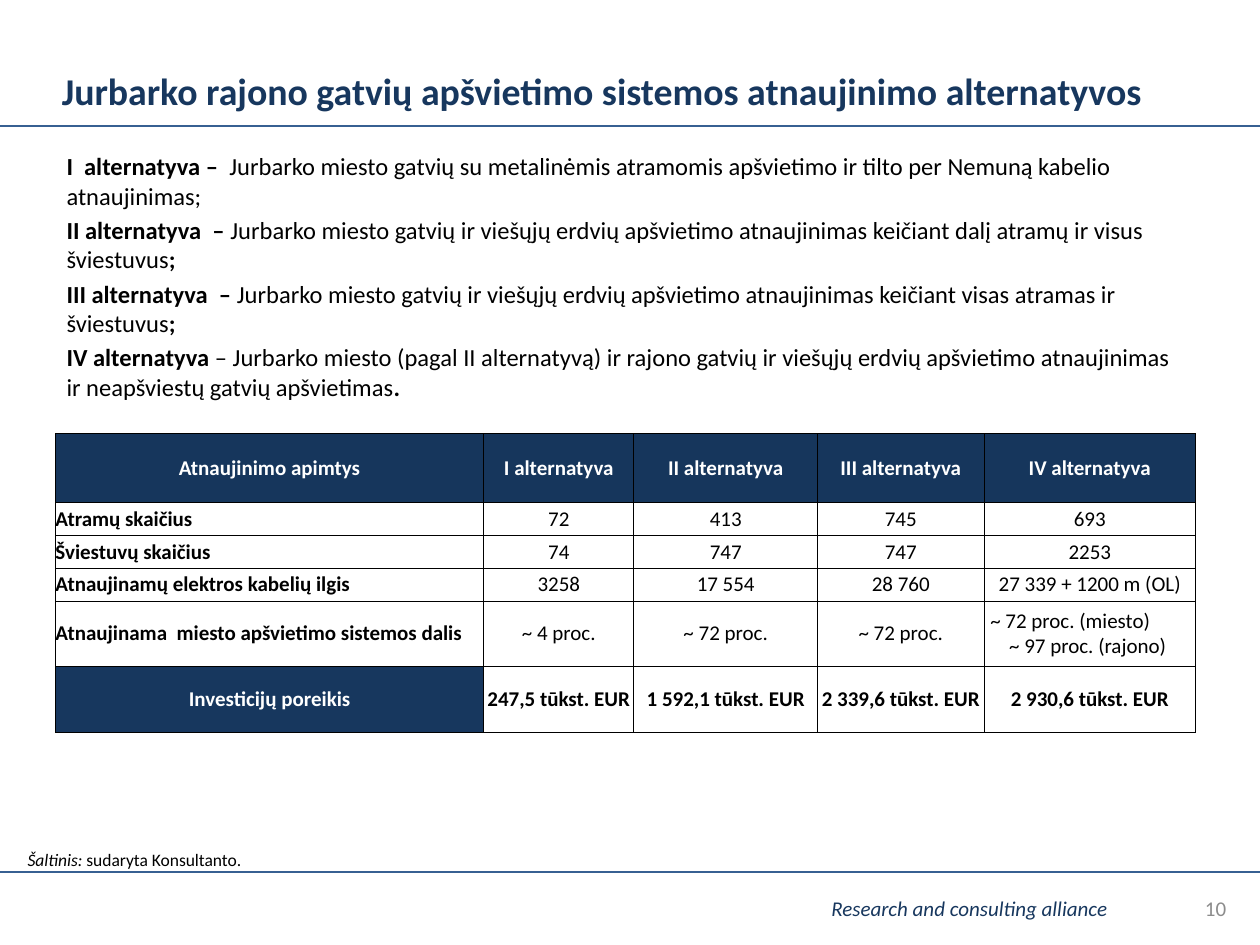
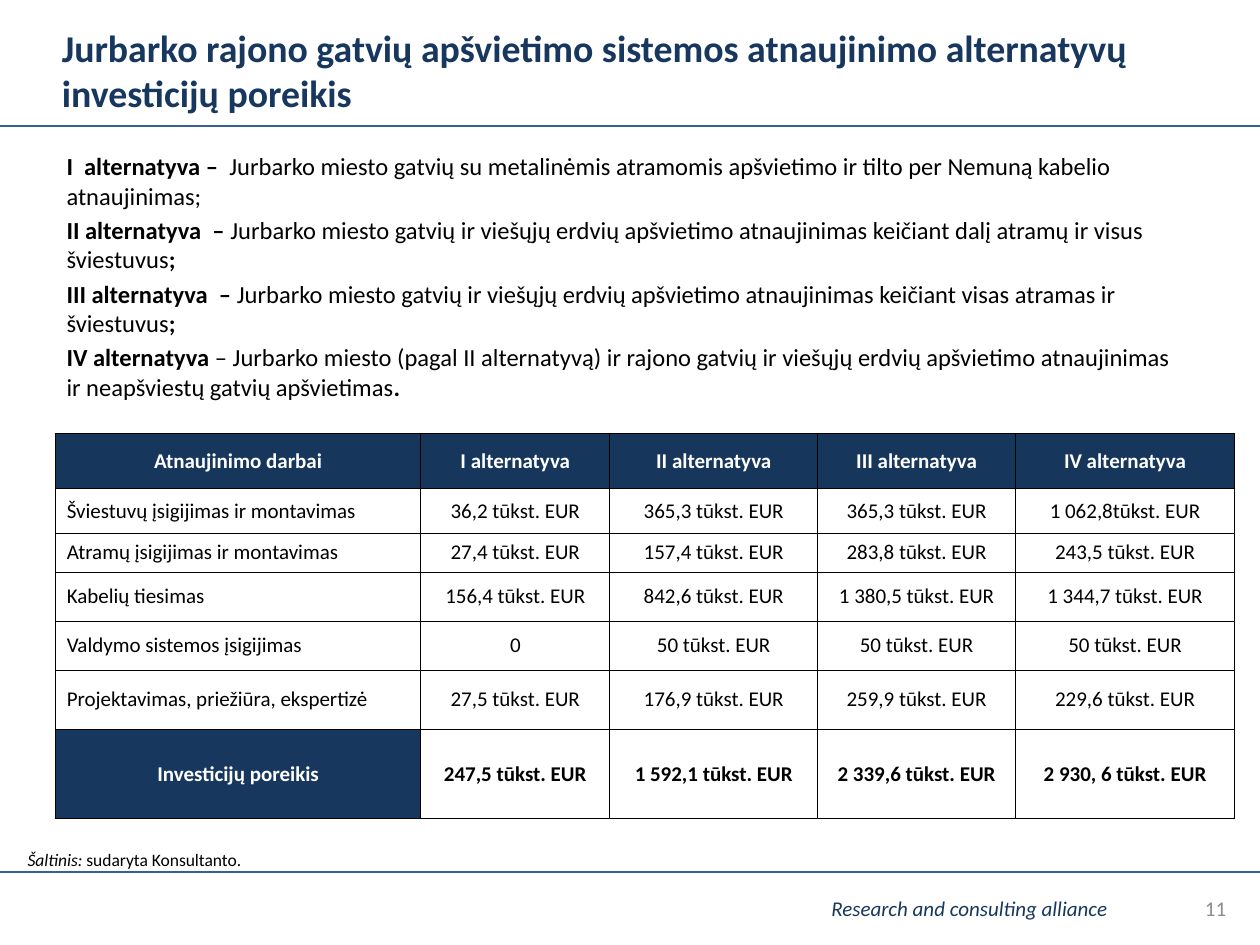
from dataclasses import dataclass
from typing import NamedTuple

from lxml.etree import SubElement
from pptx import Presentation
from pptx.dml.color import RGBColor
from pptx.enum.shapes import MSO_CONNECTOR
from pptx.enum.text import MSO_ANCHOR as Anchor, MSO_AUTO_SIZE as AutoSize, PP_ALIGN as Align
from pptx.oxml.ns import qn
from pptx.util import Inches, Pt

COLORS = {
    "navy": "17375E",
    "header": "16365C",
    "rule": "376092",
    "number": "8C8C8C",
    "black": "000000",
    "white": "FFFFFF",
}
FONT = "Calibri"
TITLE_ONLY = 5
RULE_TOPS = (1, 6.92)


class Box(NamedTuple):
    left: float
    top: float
    width: float
    height: float

    def lengths(self) -> list:
        return [Inches(value) for value in self]


class Run(NamedTuple):
    text: str
    bold: bool = False
    italic: bool = False


@dataclass
class CostTable:
    width: float
    columns: list[float]
    rows: list[float]
    cells: list[list[str]]
    label_bold: bool
    label_inset: float


@dataclass
class AlternativesSlide:
    title: str
    title_top: float
    number: str
    table: CostTable


BODY_BOX = Box(0.43, 1.15, 9, 4.95)
SOURCE_BOX = Box(0.12, 6.74, 7.01, 0.16)
FOOTER_BOX = Box(6.5, 7.06, 3.46, 0.29)
NUMBER_BOX = Box(7.5, 7.01, 2.33, 0.4)
TABLE_LEFT, TABLE_TOP = 0.44, 3.44

ALTERNATIVES = [
    [Run("I  alternatyva –  ", bold=True),
     Run("Jurbarko miesto gatvių su metalinėmis atramomis apšvietimo ir tilto per "
         "Nemuną kabelio atnaujinimas;")],
    [Run("II alternatyva  – ", bold=True),
     Run("Jurbarko miesto gatvių ir viešųjų erdvių apšvietimo atnaujinimas keičiant "
         "dalį atramų ir visus šviestuvus"),
     Run(";", bold=True)],
    [Run("III alternatyva  – ", bold=True),
     Run("Jurbarko miesto gatvių ir viešųjų erdvių apšvietimo atnaujinimas keičiant "
         "visas atramas ir šviestuvus"),
     Run(";", bold=True)],
    [Run("IV alternatyva ", bold=True),
     Run("– Jurbarko miesto (pagal II alternatyvą) ir rajono gatvių ir viešųjų erdvių "
         "apšvietimo atnaujinimas ir neapšviestų gatvių apšvietimas"),
     Run(".", bold=True)],
]
SOURCE = [[Run("Šaltinis: ", italic=True), Run("sudaryta Konsultanto.")]]
ALTERNATIVE_NAMES = ["I alternatyva", "II alternatyva", "III alternatyva", "IV alternatyva"]

SLIDES = [
    AlternativesSlide(
        "Jurbarko rajono gatvių apšvietimo sistemos atnaujinimo alternatyvos",
        0.45,
        "10",
        CostTable(
            width=9.05,
            columns=[3.4, 1.19, 1.46, 1.32, 1.68],
            rows=[0.55, 0.26, 0.26, 0.26, 0.52, 0.52],
            cells=[
                ["Atnaujinimo apimtys", *ALTERNATIVE_NAMES],
                ["Atramų skaičius", "72", "413", "745", "693"],
                ["Šviestuvų skaičius", "74", "747", "747", "2253"],
                ["Atnaujinamų elektros kabelių ilgis", "3258", "17 554", "28 760",
                 "27 339 + 1200 m (OL)"],
                ["Atnaujinama  miesto apšvietimo sistemos dalis", "~ 4 proc.", "~ 72 proc.",
                 "~ 72 proc.", "~ 72 proc. (miesto)\n~ 97 proc. (rajono)"],
                ["Investicijų poreikis", "247,5 tūkst. EUR", "1 592,1 tūkst. EUR",
                 "2 339,6 tūkst. EUR", "2 930,6 tūkst. EUR"],
            ],
            label_bold=True,
            label_inset=0,
        ),
    ),
    AlternativesSlide(
        "Jurbarko rajono gatvių apšvietimo sistemos atnaujinimo alternatyvų "
        "investicijų poreikis",
        0.29,
        "11",
        CostTable(
            width=9.36,
            columns=[2.9, 1.5, 1.65, 1.57, 1.74],
            rows=[0.44, 0.35, 0.31, 0.39, 0.39, 0.47, 0.71],
            cells=[
                ["Atnaujinimo darbai", *ALTERNATIVE_NAMES],
                ["Šviestuvų įsigijimas ir montavimas", "36,2 tūkst. EUR", "365,3 tūkst. EUR",
                 "365,3 tūkst. EUR", "1 062,8tūkst. EUR"],
                ["Atramų įsigijimas ir montavimas", "27,4 tūkst. EUR", "157,4 tūkst. EUR",
                 "283,8 tūkst. EUR", "243,5 tūkst. EUR"],
                ["Kabelių tiesimas", "156,4 tūkst. EUR", "842,6 tūkst. EUR",
                 "1 380,5 tūkst. EUR", "1 344,7 tūkst. EUR"],
                ["Valdymo sistemos įsigijimas", "0", *["50 tūkst. EUR"] * 3],
                ["Projektavimas, priežiūra, ekspertizė", "27,5 tūkst. EUR",
                 "176,9 tūkst. EUR", "259,9 tūkst. EUR", "229,6 tūkst. EUR"],
                ["Investicijų poreikis", "247,5 tūkst. EUR", "1 592,1 tūkst. EUR",
                 "2 339,6 tūkst. EUR", "2 930, 6 tūkst. EUR"],
            ],
            label_bold=False,
            label_inset=0.09,
        ),
    ),
]


def rgb(name: str) -> RGBColor:
    return RGBColor.from_string(COLORS[name])


def write_text(frame, text, *, size: float = 12, color: str = "black", bold: bool = False,
               italic: bool = False, align=Align.LEFT, gap: float = 0,
               indents: tuple = ()) -> None:
    if isinstance(text, str):
        text = [[Run(line, bold, italic)] for line in text.split("\n")]
    for index, runs in enumerate(text):
        paragraph = frame.paragraphs[0] if index == 0 else frame.add_paragraph()
        paragraph.alignment = align
        paragraph.space_before = Pt(gap if index else 0)
        if indents:
            paragraph._p.get_or_add_pPr().set("marL", str(Inches(indents[index])))
        for part in runs:
            run = paragraph.add_run()
            run.text = part.text
            run.font.name = FONT
            run.font.size = Pt(size)
            run.font.bold = part.bold
            run.font.italic = part.italic
            run.font.color.rgb = rgb(color)


def add_text(slide, box: Box, text, *, anchor=Anchor.MIDDLE, **text_format) -> None:
    frame = slide.shapes.add_textbox(*box.lengths()).text_frame
    frame.word_wrap = True
    frame.vertical_anchor = anchor
    if anchor == Anchor.MIDDLE:
        frame.margin_top = frame.margin_bottom = 0
    write_text(frame, text, **text_format)


def add_rule(slide, top: float) -> None:
    rule = slide.shapes.add_connector(
        MSO_CONNECTOR.STRAIGHT, 0, Inches(top), Inches(10), Inches(top))
    rule.line.color.rgb = rgb("rule")
    rule.line.width = Pt(1)
    SubElement(rule._element.spPr, qn("a:effectLst"))


def add_frame(slide, number: str) -> None:
    for top in RULE_TOPS:
        add_rule(slide, top)
    add_text(slide, FOOTER_BOX, "Research and consulting alliance", color="navy", italic=True)
    add_text(slide, NUMBER_BOX, number, color="number", align=Align.RIGHT)


def set_title(slide, text: str, top: float) -> None:
    title = slide.shapes.title
    title.left, title.top, title.width, title.height = Box(0.39, top, 9, 0.53).lengths()
    frame = title.text_frame
    frame.word_wrap = True
    frame.auto_size = AutoSize.NONE
    frame.vertical_anchor = Anchor.MIDDLE
    write_text(frame, text, size=21.6, color="navy", bold=True)


def add_borders(cell) -> None:
    properties = cell._tc.get_or_add_tcPr()
    for index, side in enumerate(("lnL", "lnR", "lnT", "lnB")):
        line = SubElement(properties, qn(f"a:{side}"), w=str(Pt(0.5)))
        properties.insert(index, line)
        fill = SubElement(line, qn("a:solidFill"))
        SubElement(fill, qn("a:srgbClr"), val=COLORS["black"])


def format_cell(cell, fill: str | None) -> None:
    cell.margin_left = cell.margin_right = cell.margin_top = cell.margin_bottom = 0
    cell.vertical_anchor = Anchor.MIDDLE
    if fill:
        cell.fill.solid()
        cell.fill.fore_color.rgb = rgb(fill)
    else:
        cell.fill.background()
    add_borders(cell)


def add_cost_table(slide, data: CostTable) -> None:
    box = Box(TABLE_LEFT, TABLE_TOP, data.width, sum(data.rows))
    table = slide.shapes.add_table(
        len(data.rows), len(data.columns), *box.lengths()).table
    table.first_row = table.horz_banding = False
    for column, width in zip(table.columns, data.columns):
        column.width = Inches(width)
    for row, height in zip(table.rows, data.rows):
        row.height = Inches(height)

    last = len(data.rows) - 1
    for row_index, values in enumerate(data.cells):
        for column_index, value in enumerate(values):
            cell = table.cell(row_index, column_index)
            is_header = row_index == 0
            is_total = row_index == last
            is_label = column_index == 0 and not is_header and not is_total
            is_split = "\n" in value
            fill = "header" if is_header else "navy" if is_total and column_index == 0 else None
            format_cell(cell, fill)
            if is_label:
                cell.margin_left = Inches(data.label_inset)
            write_text(
                cell.text_frame, value,
                color="white" if fill else "black",
                bold=is_header or is_total or (is_label and data.label_bold),
                align=Align.LEFT if is_label or is_split else Align.CENTER,
                indents=(0.05, 0.2) if is_split else ())


def build_slide(presentation, content: AlternativesSlide) -> None:
    slide = presentation.slides.add_slide(presentation.slide_layouts[TITLE_ONLY])
    add_frame(slide, content.number)
    set_title(slide, content.title, content.title_top)
    add_text(slide, BODY_BOX, ALTERNATIVES, anchor=Anchor.TOP, size=14, gap=2.8)
    add_cost_table(slide, content.table)
    add_text(slide, SOURCE_BOX, SOURCE, size=10)


def main() -> None:
    presentation = Presentation()
    presentation.slide_width = Inches(10)
    presentation.slide_height = Inches(7.5)
    for content in SLIDES:
        build_slide(presentation, content)
    presentation.save("out.pptx")


if __name__ == "__main__":
    main()
